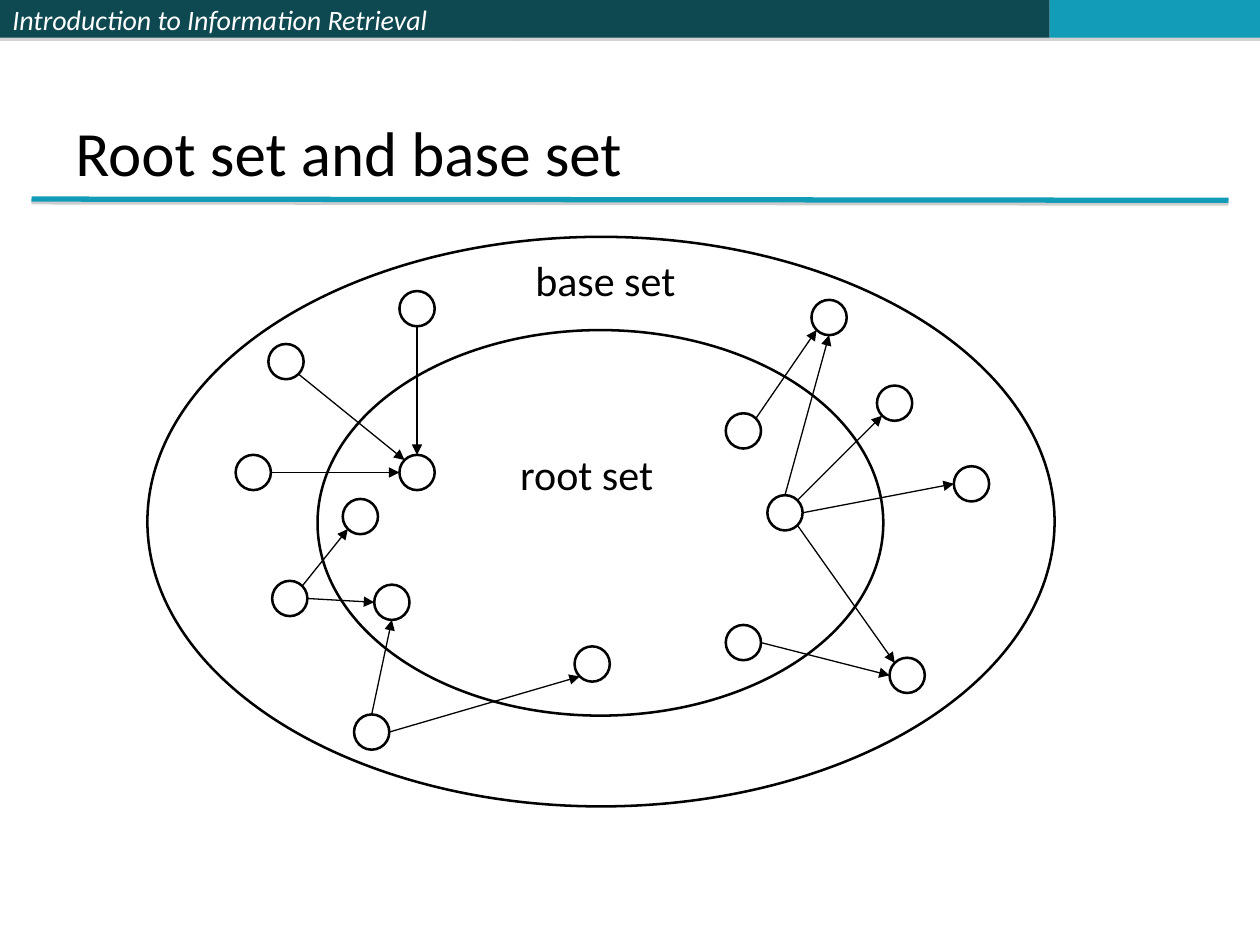
from dataclasses import dataclass
from math import cos, radians, sin
from typing import NamedTuple, Optional

from lxml.etree import SubElement
from pptx import Presentation
from pptx.dml.color import RGBColor
from pptx.enum.shapes import MSO_CONNECTOR, MSO_SHAPE
from pptx.enum.text import MSO_ANCHOR, PP_ALIGN
from pptx.oxml.ns import qn
from pptx.util import Inches, Pt


@dataclass(frozen=True)
class Theme:
    font: str = "Calibri"
    ink: str = "000000"
    white: str = "FFFFFF"
    dark: str = "0E4851"
    accent: str = "139CB7"
    shadow: str = "808080"
    header_size: int = 16
    title_size: int = 36
    label_size: int = 24
    outline: float = 1.45
    arrow: float = 0.75
    rule: float = 3


class Box(NamedTuple):
    left: float
    top: float
    width: float
    height: float


class Point(NamedTuple):
    x: float
    y: float


class Link(NamedTuple):
    source: str
    source_side: str
    target: str
    target_side: str


THEME = Theme()
NODE_SIZE = 0.28
HEADER_HEIGHT = 0.3
SIDE_ANGLES = {side: 45 * step for step, side in
               enumerate(["E", "SE", "S", "SW", "W", "NW", "N", "NE"])}

# Pages of the web graph, by top left corner
NODES = {
    "north": Point(3.17, 2.31),
    "northwest": Point(2.13, 2.73),
    "west": Point(1.87, 3.61),
    "southwest": Point(2.16, 4.61),
    "south": Point(2.81, 5.67),
    "root left": Point(3.17, 3.61),
    "root inner": Point(2.72, 3.96),
    "root lower": Point(2.97, 4.64),
    "root bottom": Point(4.56, 5.13),
    "root upper right": Point(5.76, 3.28),
    "root right": Point(6.09, 3.93),
    "root lower right": Point(5.76, 4.96),
    "northeast": Point(6.44, 2.38),
    "upper east": Point(6.96, 3.06),
    "east": Point(7.57, 3.7),
    "southeast": Point(7.06, 5.22),
}

LINKS = [
    Link("northwest", "SE", "root left", "NW"),
    Link("west", "E", "root left", "W"),
    Link("north", "S", "root left", "N"),
    Link("southwest", "NE", "root inner", "SW"),
    Link("southwest", "E", "root lower", "W"),
    Link("south", "N", "root lower", "S"),
    Link("south", "E", "root bottom", "SW"),
    Link("root upper right", "NE", "northeast", "SW"),
    Link("root right", "N", "northeast", "S"),
    Link("root right", "NE", "upper east", "SW"),
    Link("root right", "E", "east", "W"),
    Link("root right", "SE", "southeast", "NW"),
    Link("root lower right", "E", "southeast", "W"),
]


def color(value: str) -> RGBColor:
    return RGBColor.from_string(value)


def add_shadow(effects, opacity: int, distance: float) -> None:
    shadow = SubElement(effects, qn("a:outerShdw"), dist=str(Pt(distance)),
                        dir="5400000", algn="ctr", rotWithShape="0")
    tint = SubElement(shadow, qn("a:srgbClr"), val=THEME.shadow)
    SubElement(tint, qn("a:alpha"), val=str(opacity * 1000))


def add_form(page, kind, box: Box, fill: Optional[str] = None):
    """A filled form has no outline; an unfilled one is outlined."""
    form = page.shapes.add_shape(kind, *map(Inches, box))
    form.shadow.inherit = False
    if fill:
        form.fill.solid()
        form.fill.fore_color.rgb = color(fill)
        form.line.fill.background()
    else:
        form.fill.background()
        form.line.color.rgb = color(THEME.ink)
        form.line.width = Pt(THEME.outline)
    return form


def add_line(page, start: Point, end: Point, tint: str, width: float):
    """Draw a straight line; return it with its empty effect list."""
    line = page.shapes.add_connector(MSO_CONNECTOR.STRAIGHT,
                                     *map(Inches, (*start, *end)))
    line.line.color.rgb = color(tint)
    line.line.width = Pt(width)
    effects = SubElement(line._element.spPr, qn("a:effectLst"))
    return line, effects


def write(shape, text: str, size: int, tint: str, anchor=MSO_ANCHOR.TOP,
          wrap: bool = True, italic: bool = False) -> None:
    frame = shape.text_frame
    frame.text = text
    frame.word_wrap = wrap
    frame.vertical_anchor = anchor
    para = frame.paragraphs[0]
    para.alignment = PP_ALIGN.LEFT
    font = para.runs[0].font
    font.name, font.size, font.italic = THEME.font, Pt(size), italic
    font.color.rgb = color(tint)


def add_label(page, text: str, box: Box, size: int, **layout) -> None:
    label = page.shapes.add_textbox(*map(Inches, box))
    write(label, text, size, THEME.ink, **layout)


def side_point(node: str, side: str) -> Point:
    radius, angle = NODE_SIZE / 2, radians(SIDE_ANGLES[side])
    corner = NODES[node]
    return Point(corner.x + radius * (1 + cos(angle)),
                 corner.y + radius * (1 + sin(angle)))


def add_link(page, link: Link) -> None:
    arrow, _ = add_line(page, side_point(link.source, link.source_side),
                        side_point(link.target, link.target_side),
                        THEME.ink, THEME.arrow)
    SubElement(arrow.line._get_or_add_ln(), qn("a:tailEnd"), type="triangle")


def main() -> None:
    deck = Presentation()
    deck.slide_width, deck.slide_height = Inches(10), Inches(7.5)
    page = deck.slides.add_slide(deck.slide_layouts[6])

    # Header band
    left = 0
    bands = []
    for width, fill in [(4.08, THEME.dark), (4.25, THEME.dark), (1.67, THEME.accent)]:
        band = add_form(page, MSO_SHAPE.RECTANGLE,
                        Box(left, 0, width, HEADER_HEIGHT), fill)
        add_shadow(band._element.spPr.find(qn("a:effectLst")), 35, 1.8)
        bands.append(band)
        left += width
    write(bands[0], "Introduction to Information Retrieval", THEME.header_size,
          THEME.white, anchor=MSO_ANCHOR.MIDDLE, italic=True)

    # Title and rule
    _, effects = add_line(page, Point(0.25, 1.58), Point(9.75, 1.59),
                          THEME.accent, THEME.rule)
    add_shadow(effects, 38, 1.6)
    add_label(page, "Root set and base set", Box(0.5, 0.11, 9, 1.44),
              THEME.title_size, anchor=MSO_ANCHOR.BOTTOM)

    # Root set inside base set
    for box in [Box(2.52, 2.62, 4.49, 3.06), Box(1.17, 1.88, 7.2, 4.52)]:
        add_form(page, MSO_SHAPE.OVAL, box)

    # Pages and their links
    for corner in NODES.values():
        add_form(page, MSO_SHAPE.OVAL, Box(*corner, NODE_SIZE, NODE_SIZE))
    for link in LINKS:
        add_link(page, link)

    # Set names
    add_label(page, "root set", Box(4.03, 3.51, 1.31, 0.5), THEME.label_size, wrap=False)
    add_label(page, "base set", Box(4.15, 1.97, 1.46, 0.5), THEME.label_size, wrap=False)

    deck.save("out.pptx")


if __name__ == "__main__":
    main()
